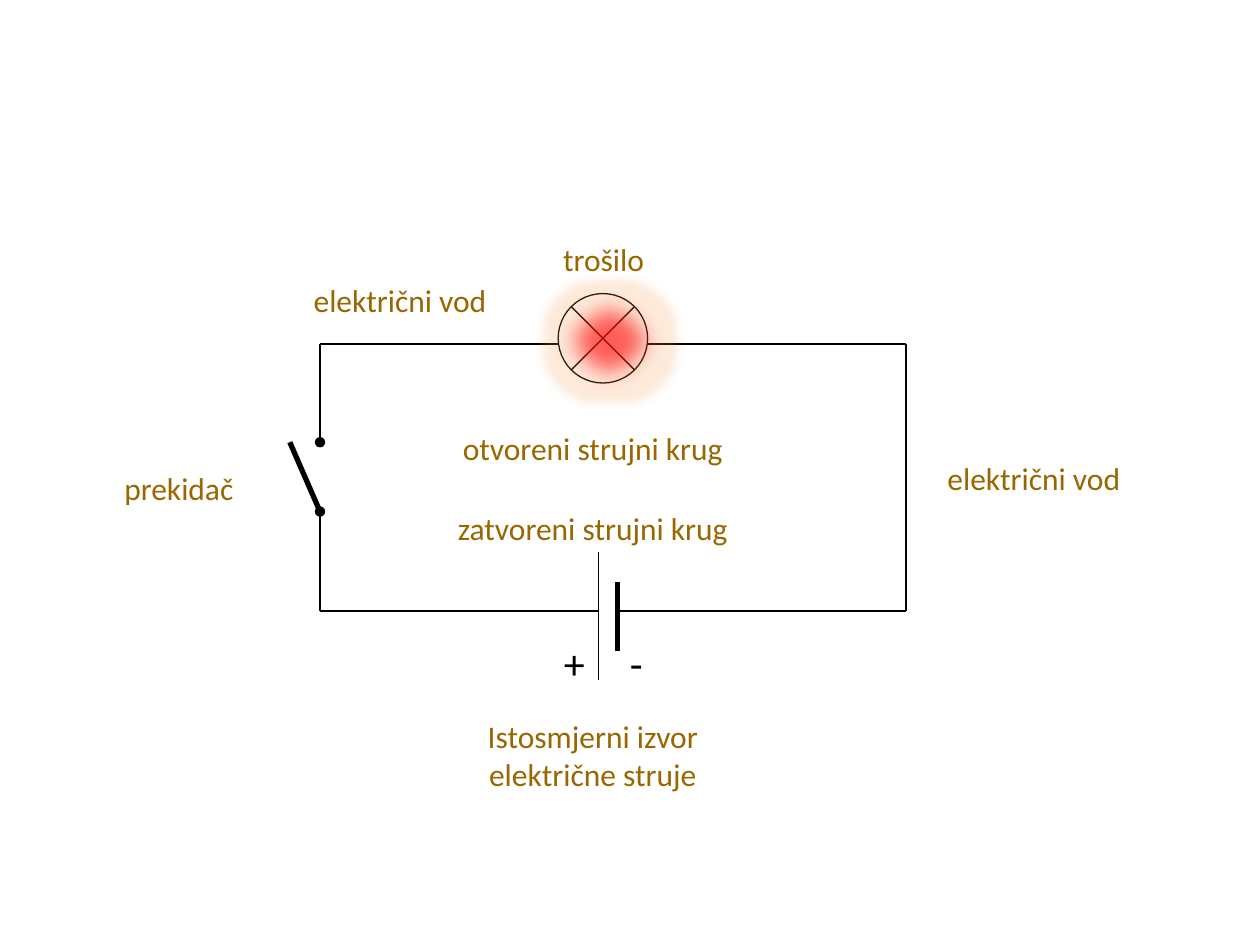
from lxml.etree import SubElement
from pptx import Presentation
from pptx.dml.color import RGBColor
from pptx.enum.shapes import MSO_CONNECTOR as Connector, MSO_SHAPE as Shape
from pptx.enum.text import PP_ALIGN as Align
from pptx.oxml.ns import qn
from pptx.util import Inches, Pt

BLACK, OCHRE, RED = "000000", "996600", "FF0000"
LEFT, RIGHT, TOP, BOTTOM = 2.54, 7.19, 2.73, 4.85
PLUS_X, MINUS_X = 4.75, 4.9
LAMP_LEFT, LAMP_TOP, LAMP_SIZE = 4.43, 2.33, 0.71
SWITCH_TOP, SWITCH_BOTTOM = 3.51, 4.06


def color(hex_code):
    """Turn a hex string into a colour."""
    return RGBColor.from_string(hex_code)


def add_wire(slide, start, end, weight=0.75, dot=None):
    """Draw a straight conductor, with an optional dot at headEnd or tailEnd."""
    wire = slide.shapes.add_connector(
        Connector.STRAIGHT, *map(Inches, start), *map(Inches, end))
    wire.line.color.rgb = color(BLACK)
    wire.line.width = Pt(weight)
    if dot:
        SubElement(wire.line._get_or_add_ln(), qn(f"a:{dot}"), type="oval")
    SubElement(wire._element.spPr, qn("a:effectLst"))


def add_label(slide, text, left, top, width, height=0.4, size=18,
              hue=OCHRE, align=Align.CENTER):
    """Write a text label."""
    box = slide.shapes.add_textbox(*map(Inches, (left, top, width, height)))
    box.text_frame.word_wrap = True
    paragraph = box.text_frame.paragraphs[0]
    paragraph.text = text
    paragraph.alignment = align
    paragraph.font.name = "Calibri"
    paragraph.font.size = Pt(size)
    paragraph.font.color.rgb = color(hue)


def add_lamp(slide):
    """Draw the lamp symbol."""
    lamp = slide.shapes.add_shape(
        Shape.FLOWCHART_SUMMING_JUNCTION,
        *map(Inches, (LAMP_LEFT, LAMP_TOP, LAMP_SIZE, LAMP_SIZE)))
    lamp.shadow.inherit = False
    lamp.fill.background()
    lamp.line.color.rgb = color(BLACK)
    lamp.line.width = Pt(0.75)


def add_light(slide):
    """Draw the soft red light with its pale glow over the lamp."""
    light = slide.shapes.add_shape(
        Shape.STAR_32_POINT, *map(Inches, (4.27, 2.18, 1.14, 1.05)))
    light.adjustments[0] = 0.375
    light.fill.solid()
    light.fill.fore_color.rgb = color(RED)
    fill_color = light._element.spPr.find(qn("a:solidFill"))[0]
    SubElement(fill_color, qn("a:alpha"), val="60000")
    light.line.color.rgb = color("F5430B")
    light.line.width = Pt(2.25)
    light.shadow.inherit = False
    effects = light._element.spPr.find(qn("a:effectLst"))
    glow = SubElement(effects, qn("a:glow"), rad=str(Pt(11)))
    glow_color = SubElement(glow, qn("a:srgbClr"), val="F79646")
    SubElement(glow_color, qn("a:alpha"), val="20000")
    SubElement(effects, qn("a:softEdge"), rad=str(Pt(12.5)))


def add_circuit(slide):
    """Draw the battery, conductors, lamp and switch."""
    add_wire(slide, (PLUS_X, 4.38), (PLUS_X, 5.4))
    add_wire(slide, (MINUS_X, 4.62), (MINUS_X, 5.17), weight=3)
    add_wire(slide, (MINUS_X, BOTTOM), (RIGHT, BOTTOM))
    add_wire(slide, (RIGHT, TOP), (RIGHT, BOTTOM))
    add_wire(slide, (LAMP_LEFT + LAMP_SIZE, TOP), (RIGHT, TOP))
    add_lamp(slide)
    add_wire(slide, (LEFT, TOP), (LAMP_LEFT, TOP))
    add_wire(slide, (LEFT, TOP), (LEFT, SWITCH_TOP), dot="tailEnd")
    add_wire(slide, (LEFT, BOTTOM), (PLUS_X, BOTTOM))
    add_wire(slide, (LEFT, SWITCH_BOTTOM), (LEFT, BOTTOM), dot="headEnd")
    add_wire(slide, (2.3, SWITCH_TOP), (LEFT, SWITCH_BOTTOM), weight=3)


def add_labels(slide):
    """Name the poles and the parts of the circuit."""
    for sign, left, align in (("+", 4.27, Align.RIGHT),
                              ("-", MINUS_X, Align.LEFT)):
        add_label(slide, sign, left, 5.01, 0.47, 0.5, 24, BLACK, align)
    add_label(slide, "Istosmjerni izvor električne struje", 3.25, 5.64, 2.91, 0.7)
    for text, left, top, width in (
            ("električni vod", 7.26, 3.59, 1.89),
            ("električni vod", 2.23, 2.18, 1.89),
            ("trošilo", 4.12, 1.86, 1.34),
            ("prekidač", 0.75, 3.67, 1.34),
            ("otvoreni strujni krug", 3.25, 3.36, 2.91),
            ("zatvoreni strujni krug", 3.25, 3.99, 2.91)):
        add_label(slide, text, left, top, width)


def main():
    """Build the circuit slide and save it."""
    deck = Presentation()
    deck.slide_width, deck.slide_height = Inches(10), Inches(7.5)
    slide = deck.slides.add_slide(deck.slide_layouts[6])
    add_circuit(slide)
    add_labels(slide)
    add_light(slide)
    deck.save("out.pptx")


if __name__ == "__main__":
    main()
